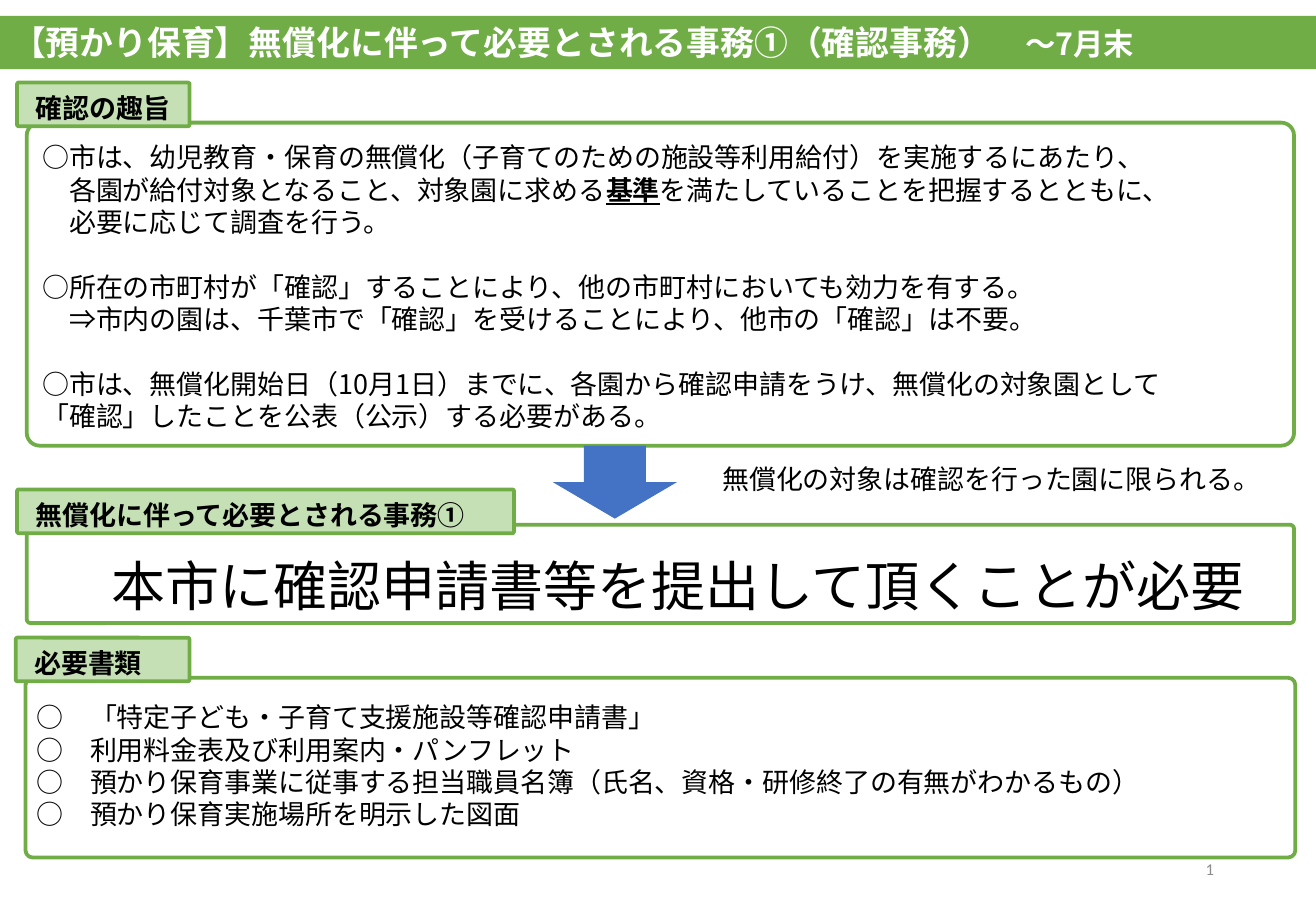
from lxml import etree
from pptx import Presentation
from pptx import util as u
from pptx.dml.color import RGBColor
from pptx.enum import shapes, text
from pptx.oxml import ns

GREEN = RGBColor(0x70, 0xAD, 0x47)
PALE = RGBColor(0xC5, 0xE0, 0xB4)
BLUE = RGBColor(0x44, 0x72, 0xC4)
BLACK = RGBColor(0, 0, 0)
WHITE = RGBColor(255, 255, 255)
GRAY = RGBColor(0x8C, 0x8C, 0x8C)

LEFT, MID, RIGHT = text.PP_ALIGN.LEFT, text.PP_ALIGN.CENTER, text.PP_ALIGN.RIGHT
TOP, HALF = text.MSO_ANCHOR.TOP, text.MSO_ANCHOR.MIDDLE
KIND = shapes.MSO_SHAPE


def put(item, values):
    for key, value in values.items():
        setattr(item, key, value)


class Deck:
    face = "Noto Sans CJK JP"
    pitch = 1.2  # line height per point of text

    def __init__(self, wide, high):
        self.prs = Presentation()
        put(self.prs, {"slide_width": u.Inches(wide), "slide_height": u.Inches(high)})
        self.slide = self.prs.slides.add_slide(self.prs.slide_layouts[5])

    def fill_text(self, shape, paras, size=16, color=BLACK, bold=False, align=LEFT,
                  anchor=TOP, face=None, pad=(0.1, 0.05, 0.1, 0.05)):
        """Each paragraph is a list of (text, font values); None makes a gap."""
        frame = shape.text_frame
        sides = ("margin_left", "margin_top", "margin_right", "margin_bottom")
        put(frame, dict(zip(sides, map(u.Inches, pad))))
        put(frame, {"word_wrap": True, "vertical_anchor": anchor,
                    "auto_size": text.MSO_AUTO_SIZE.NONE})
        step = u.Pt(size * self.pitch)
        para, gap = frame.paragraphs[0], 0
        for i, parts in enumerate(paras):
            if parts is None:
                gap = step
                continue
            if i:
                para = frame.add_paragraph()
            put(para, {"alignment": align, "line_spacing": step,
                       "space_before": gap, "space_after": 0})
            gap = 0
            for words, extra in parts:
                run = para.add_run()
                run.text = words
                put(run.font, {"size": u.Pt(size), "bold": bold,
                               "name": face or self.face, **extra})
                run.font.color.rgb = color
                east = etree.SubElement(run._r.get_or_add_rPr(), ns.qn("a:ea"))
                east.set("typeface", self.face)

    def title(self, box, parts, fill, **style):
        shape = self.slide.shapes.title
        put(shape, dict(zip(("left", "top", "width", "height"), map(u.Inches, box))))
        shape.fill.solid()
        shape.fill.fore_color.rgb = fill
        self.fill_text(shape, [parts], anchor=HALF, **style)

    def shape(self, kind, box, fill=None, line=None, bend=None):
        shape = self.slide.shapes.add_shape(kind, *map(u.Inches, box))
        shape.shadow.inherit = False
        if bend is not None:
            shape.adjustments[0] = bend
        if fill is None:
            shape.fill.background()
        else:
            shape.fill.solid()
            shape.fill.fore_color.rgb = fill
        if line is None:
            shape.line.fill.background()
        else:
            shape.line.color.rgb = line
            shape.line.width = u.Pt(2.25)
        return shape

    def frame(self, *box):
        self.shape(KIND.ROUNDED_RECTANGLE, box, line=GREEN, bend=0.04)

    def label(self, left, top, width, words, align=LEFT):
        tag = self.shape(KIND.ROUNDED_RECTANGLE, (left, top, width, 0.36),
                         PALE, GREEN, 0.04)
        self.fill_text(tag, [[(words, {})]], bold=True, align=align, anchor=HALF,
                       pad=(0.1, 0.1, 0.1, 0.05))

    def text(self, box, paras, **style):
        shape = self.slide.shapes.add_textbox(*map(u.Inches, box))
        rows = [[(p, {})] if isinstance(p, str) else p for p in paras]
        self.fill_text(shape, rows, **style)
        return shape

    def number(self, box):
        shape = self.text(box, ["1"], size=9.8, color=GRAY, align=RIGHT,
                          anchor=HALF, face="Calibri")
        run = shape.text_frame.paragraphs[0].runs[0]._r
        field = etree.Element(ns.qn("a:fld"), type="slidenum",
                              id="{B6F15528-21DE-4FAA-801E-634DDDAF4B2B}")
        run.addprevious(field)
        field.extend(list(run))
        field.getparent().remove(run)


def main():
    deck = Deck(10.83, 7.5)

    # Title band
    deck.title((0, 0.13, 10.83, 0.44),
               [("【預かり保育】無償化に伴って必要とされる事務①（確認事務）　", {}),
                ("～7月末", {"size": u.Pt(18)})],
               GREEN, size=20, color=WHITE, bold=True)

    # Purpose of the check
    deck.frame(0.22, 1.01, 10.43, 2.66)
    deck.label(0.14, 0.68, 1.42, "確認の趣旨", MID)
    deck.text((0.25, 1.11, 10.54, 2.5), [
        "○市は、幼児教育・保育の無償化（子育てのための施設等利用給付）を実施するにあたり、",
        [("　各園が給付対象となること、対象園に求める", {}),
         ("基準", {"bold": True, "underline": True}),
         ("を満たしていることを把握するとともに、", {})],
        "　必要に応じて調査を行う。",
        None,
        "○所在の市町村が「確認」することにより、他の市町村においても効力を有する。",
        "　⇒市内の園は、千葉市で「確認」を受けることにより、他市の「確認」は不要。",
        None,
        "○市は、無償化開始日（10月1日）までに、各園から確認申請をうけ、無償化の対象園として",
        "「確認」したことを公表（公示）する必要がある。",
    ])

    # Arrow and its remark
    deck.shape(KIND.DOWN_ARROW, (4.55, 3.67, 1.02, 0.6), BLUE)
    deck.text((5.64, 3.76, 5.04, 0.37),
              ["無償化の対象は確認を行った園に限られる。"], align=MID)

    # Task to do
    deck.frame(0.22, 4.32, 10.43, 0.81)
    deck.text((0.79, 4.5, 9.58, 0.64),
              ["本市に確認申請書等を提出して頂くことが必要"], size=32, align=MID)
    deck.label(0.14, 4.03, 4.09, " 無償化に伴って必要とされる事務①")

    # Papers to hand in
    deck.frame(0.21, 5.58, 10.45, 1.48)
    deck.label(0.13, 5.25, 1.43, " 必要書類")
    deck.text((0.2, 5.72, 10.54, 1.18), [
        "○　「特定子ども・子育て支援施設等確認申請書」",
        "○　利用料金表及び利用案内・パンフレット",
        "○　預かり保育事業に従事する担当職員名簿（氏名、資格・研修終了の有無がわかるもの）",
        "○　預かり保育実施場所を明示した図面",
    ])

    # Page number
    deck.number((7.65, 6.95, 2.44, 0.4))
    deck.prs.save("out.pptx")


if __name__ == "__main__":
    main()
